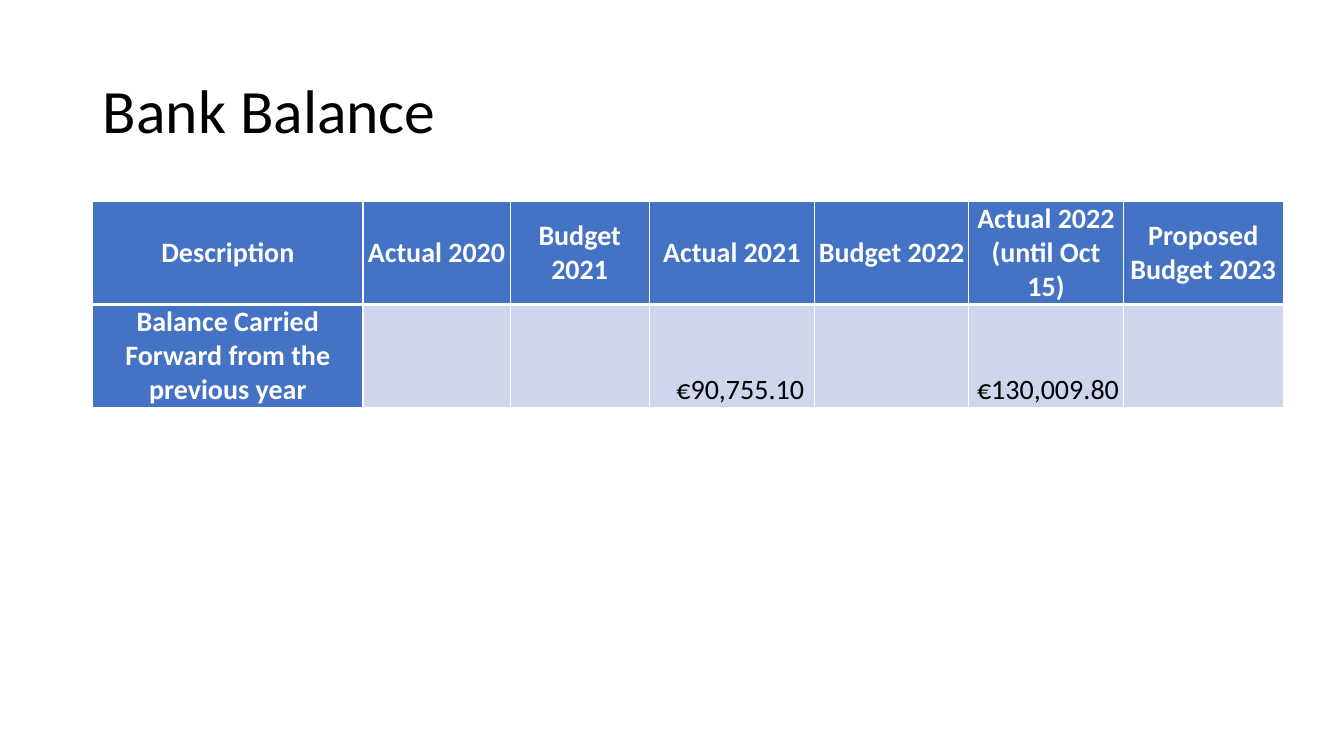
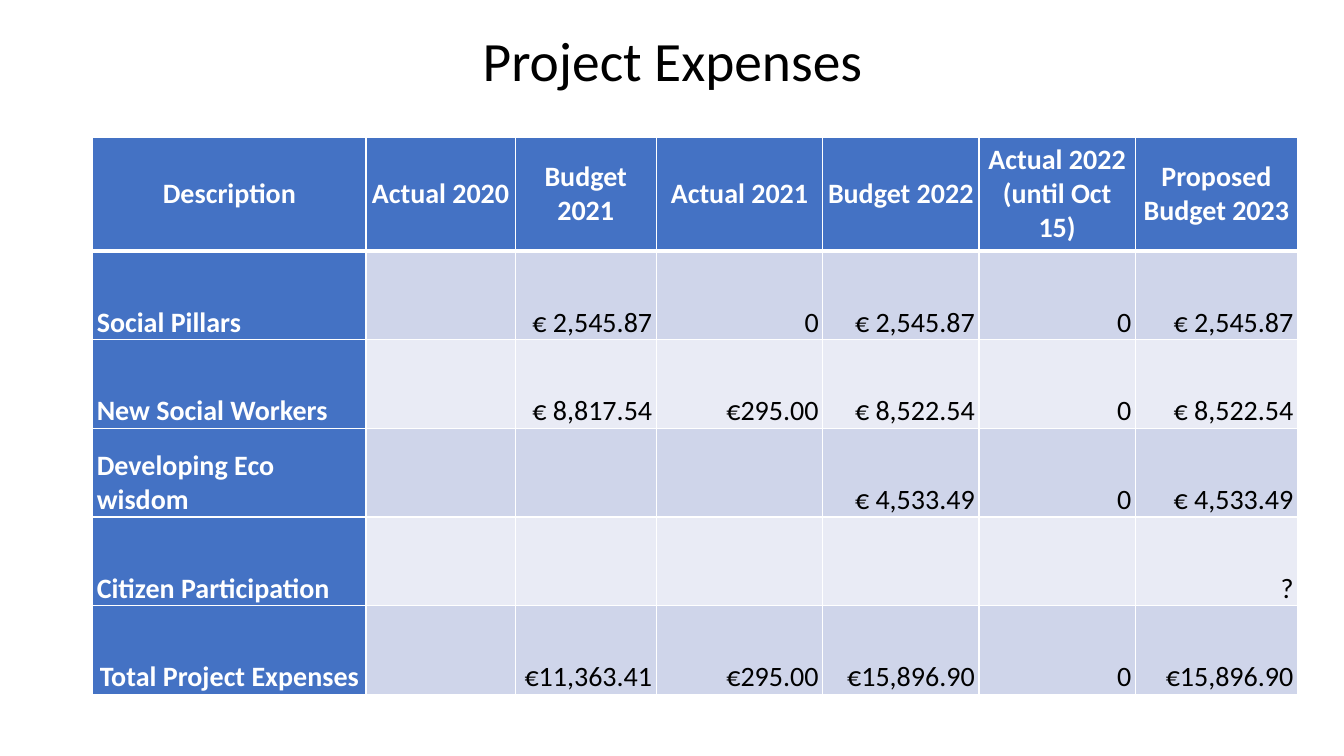
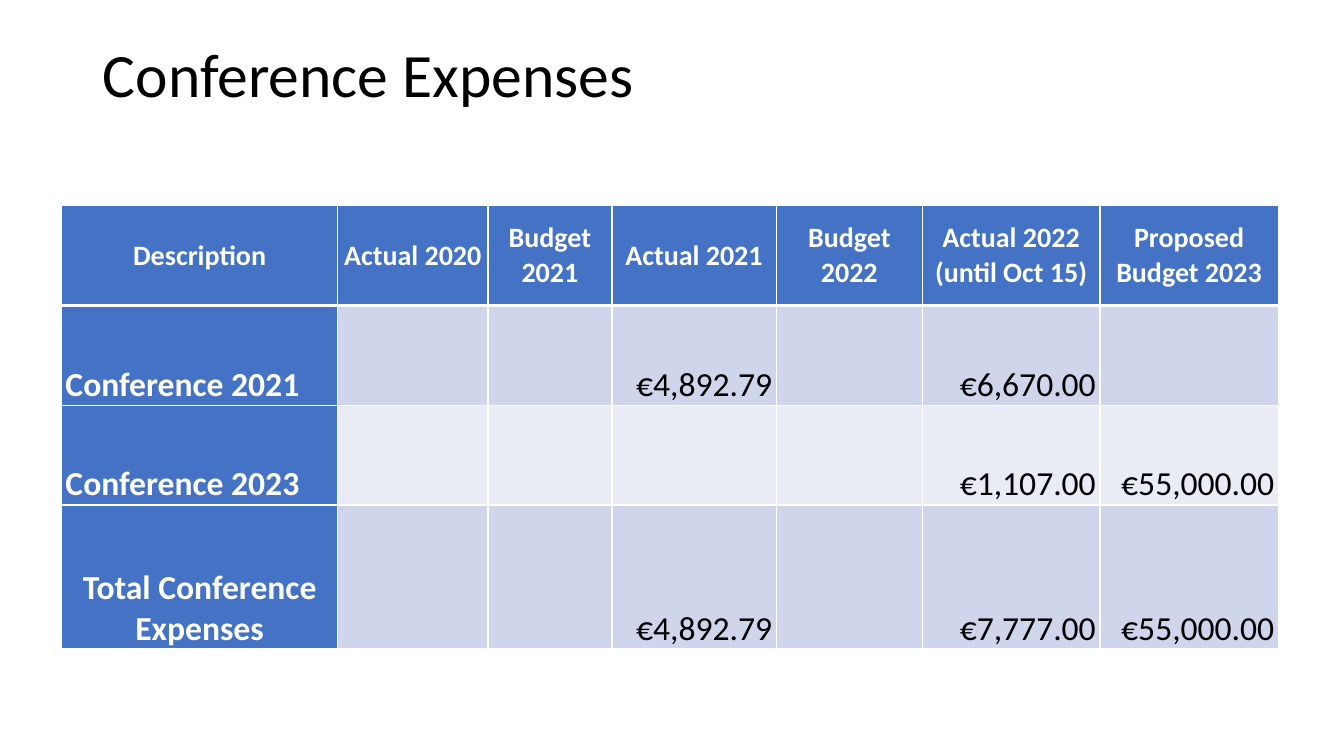
from lxml import etree
from pptx import Presentation
from pptx import util as u
from pptx.dml import color
from pptx.enum import text
from pptx.oxml import ns

FONT = "Calibri"
BLACK, WHITE, BLUE = "000000", "FFFFFF", "4472C4"
BANDS = ("CFD5EA", "E9EBF5")
LEFT, CENTER, RIGHT = text.PP_ALIGN.LEFT, text.PP_ALIGN.CENTER, text.PP_ALIGN.RIGHT
MIDDLE, BOTTOM = text.MSO_ANCHOR.MIDDLE, text.MSO_ANCHOR.BOTTOM

HEADINGS = ("Description", "Actual 2020", "Budget 2021", "Actual 2021", "Budget 2022",
            "Actual 2022 (until Oct 15)", "Proposed Budget 2023")

REPORTS = [
    dict(
        title="Bank Balance", title_size=44, title_align=LEFT,
        title_height=1.45, title_inset=0.05,
        origin=(0.92, 2), columns=(2.68, 1.46, 1.38, 1.64, 1.53, 1.53, 1.59),
        heights=(1.02, 1.02), size=20,
        rows=[
            ("Balance Carried Forward from the previous year",
             "", "", "€90,755.10 ", "", "€130,009.80", ""),
        ],
    ),
    dict(
        title="Project Expenses", title_size=39.6, title_align=CENTER,
        title_height=1.09, title_inset=0.68,
        origin=(0.92, 1.36), columns=(2.71, 1.48, 1.4, 1.65, 1.55, 1.55, 1.61),
        heights=(1.13,) + (0.88,) * 5, size=20,
        rows=[
            ("Social Pillars", "", "€ 2,545.87", "0", "€ 2,545.87", "0", "€ 2,545.87"),
            ("New Social Workers", "", "€ 8,817.54", "€295.00", "€ 8,522.54", "0", "€ 8,522.54"),
            ("Developing Eco wisdom", "", "", "", "€ 4,533.49", "0", "€ 4,533.49"),
            ("Citizen Participation", "", "", "", "", "", "?"),
            ("Total Project Expenses", "", "€11,363.41", "€295.00", "€15,896.90", "0", "€15,896.90"),
        ],
    ),
    dict(
        title="Conference Expenses", title_size=44, title_align=LEFT,
        title_height=1.45, title_inset=0.76,
        origin=(0.61, 2.04), columns=(2.74, 1.49, 1.23, 1.63, 1.45, 1.76, 1.77),
        heights=(0.99, 0.99, 0.99, 1.43), size=24,
        rows=[
            ("Conference 2021", "", "", "€4,892.79", "", "€6,670.00", ""),
            ("Conference 2023", "", "", "", "", "€1,107.00", "€55,000.00"),
            ("Total Conference Expenses", "", "", "€4,892.79", "", "€7,777.00", "€55,000.00"),
        ],
    ),
]


def rgb(value):
    return color.RGBColor.from_string(value)


def write(frame, words, size, ink=BLACK, bold=False, align=LEFT, spacing=None):
    paragraph = frame.paragraphs[0]
    paragraph.alignment = align
    paragraph.line_spacing = spacing
    font = paragraph.font
    if words:
        run = paragraph.add_run()
        run.text = words
        font = run.font
    font.name, font.size, font.bold = FONT, u.Pt(size), bold
    font.color.rgb = rgb(ink)


def add_borders(cell, widths):
    properties = cell._tc.get_or_add_tcPr()
    for position, (side, points) in enumerate(widths.items()):
        line = etree.Element(ns.qn("a:" + side), w=str(u.Pt(points)))
        fill = etree.SubElement(line, ns.qn("a:solidFill"))
        etree.SubElement(fill, ns.qn("a:srgbClr"), val=WHITE)
        properties.insert(position, line)


def add_title(slide, report):
    title = slide.shapes.title
    title.left, title.top = u.Inches(0.92), u.Inches(0.4)
    title.width, title.height = u.Inches(11.5), u.Inches(report["title_height"])
    frame = title.text_frame
    frame.word_wrap = True
    frame.auto_size = text.MSO_AUTO_SIZE.NONE
    frame.vertical_anchor = MIDDLE
    frame.margin_bottom = u.Inches(report["title_inset"])
    write(frame, report["title"], report["title_size"],
          align=report["title_align"], spacing=0.9)


def format_cell(cell, words, row, column, last_row, body_size):
    heading, label = row == 0, column == 0
    strong = heading or label
    cell.fill.solid()
    cell.fill.fore_color.rgb = rgb(BLUE if strong else BANDS[(row - 1) % 2])
    cell.margin_left = cell.margin_right = u.Inches(0.04)
    cell.margin_top = cell.margin_bottom = 0
    cell.vertical_anchor = MIDDLE if heading else BOTTOM
    if heading or (label and row == last_row):
        align = CENTER
    else:
        align = LEFT if label else RIGHT
    write(cell.text_frame, words, 20 if heading else body_size,
          ink=WHITE if strong else BLACK, bold=strong, align=align)
    add_borders(cell, dict(lnL=1, lnR=1, lnT=3 if row == 1 else 1, lnB=3 if heading else 1))


def add_budget(slide, report):
    rows = [HEADINGS] + report["rows"]
    columns, heights = report["columns"], report["heights"]
    left, top = report["origin"]
    budget = slide.shapes.add_table(
        len(rows), len(columns), u.Inches(left), u.Inches(top),
        u.Inches(sum(columns)), u.Inches(sum(heights))).table
    for column, width in zip(budget.columns, columns):
        column.width = u.Inches(width)
    for row, height in zip(budget.rows, heights):
        row.height = u.Inches(height)
    for r, entries in enumerate(rows):
        for c, words in enumerate(entries):
            format_cell(budget.cell(r, c), words, r, c, len(rows) - 1, report["size"])


def main():
    deck = Presentation()
    deck.slide_width, deck.slide_height = u.Inches(13.33), u.Inches(7.5)
    for report in REPORTS:
        slide = deck.slides.add_slide(deck.slide_layouts[5])
        add_title(slide, report)
        add_budget(slide, report)
    deck.save("out.pptx")


if __name__ == "__main__":
    main()
